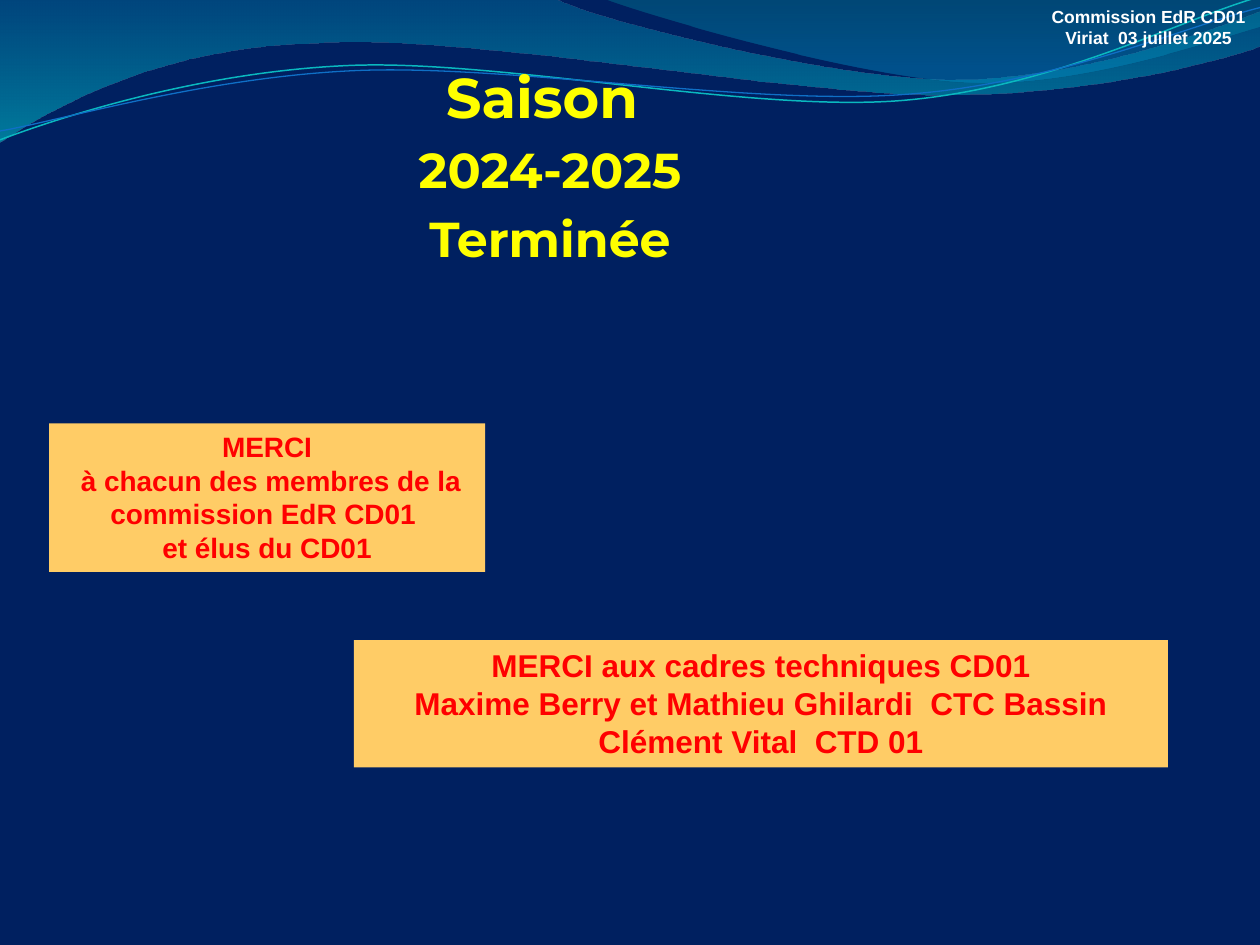
from collections import namedtuple
from math import cos, radians, sin

from lxml.etree import Element, SubElement
from pptx import Presentation
from pptx.dml.color import RGBColor
from pptx.enum.shapes import MSO_SHAPE
from pptx.enum.text import MSO_ANCHOR, MSO_AUTO_SIZE, PP_ALIGN
from pptx.oxml.ns import qn
from pptx.util import Inches, Pt

WIDTH, HEIGHT = Inches(10), Inches(7.5)
COLUMN, ROW = WIDTH / 10, HEIGHT / 7.5
STRAND_TILT = -2.7

NAVY = RGBColor(0x00, 0x20, 0x60)
YELLOW = RGBColor(0xFF, 0xFF, 0x00)
RED = RGBColor(0xFF, 0x00, 0x00)
WHITE = RGBColor(0xFF, 0xFF, 0xFF)
SAND = RGBColor(0xFF, 0xCC, 0x66)
OCEAN = RGBColor(0x00, 0x74, 0xA1)
CYAN = RGBColor(0x00, 0xC6, 0xCF)
TEAL = RGBColor(0x00, 0xA1, 0xA9)
AZURE = RGBColor(0x00, 0x8B, 0xBF)
TURQUOISE = RGBColor(0x0A, 0xB8, 0xBF)
BLUE = RGBColor(0x0F, 0x6F, 0xC6)

Box = namedtuple("Box", "left top width height")
Stop = namedtuple("Stop", "position color opacity")

BROAD_WAVE = [
    [(0, 0)], [(4.4, -0.01)],
    [(4.76, 0.17), (6.64, 0.63), (7.58, 0.63)],
    [(8.53, 0.63), (9.58, 0.26), (10, 0.09)],
    [(10.01, 0.36)],
    [(9.83, 0.44), (8.7, 0.76), (7.46, 0.75)],
    [(6.22, 0.75), (3.82, 0.28), (2.57, 0.34)],
    [(1.29, 0.36), (0.46, 0.83), (-0.01, 1.13)],
    [(0, 0)],
]
RIGHT_WAVE = [
    [(4.79, -0.01)],
    [(5.09, 0.11), (6.82, 0.62), (7.69, 0.65)],
    [(8.56, 0.69), (9.61, 0.32), (10, 0.21)],
    [(10, 0)], [(4.79, -0.01)],
]
UPPER_STRAND = [
    [(0, 1.11)],
    [(0.48, 0.93), (1.58, 0.57), (2.77, 0.52)],
    [(3.95, 0.47), (5.93, 0.89), (7.13, 0.8)],
    [(8.33, 0.71), (9.38, 0.15), (9.98, -0.02)],
]
LOWER_STRAND = [
    [(0, 1.04)],
    [(0.47, 0.96), (1.64, 0.61), (2.83, 0.56)],
    [(4.03, 0.51), (5.97, 0.84), (7.17, 0.75)],
    [(8.36, 0.67), (9.41, 0.21), (10, 0.06)],
]


def on_slide(box):
    """Turn a box in columns and rows into slide lengths."""
    return [round(n * unit) for n, unit in zip(box, (COLUMN, ROW) * 2)]


def turn(point, box, degrees):
    """Turn a point clockwise about the middle of a box."""
    middle_x, middle_y = box.width / 2, box.height / 2
    x, y = point[0] - middle_x, point[1] - middle_y
    c, s = cos(radians(degrees)), sin(radians(degrees))
    return middle_x + x * c - y * s, middle_y + x * s + y * c


def trace(slide, box, segments, closed, tilt=0):
    """Build an outline from straight and curved segments inside a box."""
    placed = []
    for segment in segments:
        level = [turn(point, box, -tilt) for point in segment]
        placed.append([(round((box.left + x) * COLUMN),
                        round((box.top + y) * ROW)) for x, y in level])
    builder = slide.shapes.build_freeform(*placed[0][0])
    builder.add_line_segments([segment[-1] for segment in placed[1:]],
                              close=closed)
    outline = builder.convert_to_shape()
    for edge, segment in zip(list(outline.element.iter(qn("a:lnTo"))),
                             placed[1:]):
        if len(segment) == 3:
            edge.tag = qn("a:cubicBezTo")
        for order, (x, y) in enumerate(segment[:-1]):
            edge.insert(order, Element(qn("a:pt"), x=str(x - outline.left),
                                       y=str(y - outline.top)))
    outline.rotation = tilt
    outline.shadow.inherit = False
    return outline


def add_wave(slide, box, segments, stops):
    """Add a wave with a translucent vertical gradient."""
    wave = trace(slide, box, segments, True)
    wave.line.fill.background()
    wave.fill.gradient()
    wave.fill.gradient_angle = 270
    for target, stop in zip(wave.fill.gradient_stops, stops):
        target.position = stop.position
        target.color.rgb = stop.color
    for color, stop in zip(wave.element.iter(qn("a:srgbClr")), stops):
        SubElement(color, qn("a:alpha"), val=str(stop.opacity * 1000))


def add_strand(slide, box, segments, color, weight):
    """Add a thin flowing line."""
    strand = trace(slide, box, segments, False, STRAND_TILT)
    strand.fill.background()
    strand.line.color.rgb = color
    strand.line.width = Pt(weight)


def add_waves(slide, box):
    """Place the decorative waves along the top of the slide."""
    add_wave(slide, box, BROAD_WAVE, [Stop(0, OCEAN, 45), Stop(1, CYAN, 55)])
    add_wave(slide, box, RIGHT_WAVE, [Stop(0, TEAL, 30), Stop(0.8, AZURE, 45)])
    add_strand(slide, box, UPPER_STRAND, TURQUOISE, 0.85)
    add_strand(slide, box, LOWER_STRAND, BLUE, 0.75)


def write(frame, lines, sizes, font, color):
    """Write centred bold lines."""
    frame.text = "\n".join(lines)
    frame.word_wrap = True
    frame.vertical_anchor = MSO_ANCHOR.TOP
    for paragraph, size in zip(frame.paragraphs, sizes):
        paragraph.alignment = PP_ALIGN.CENTER
        for run in paragraph.runs:
            run.font.name = font
            run.font.size = Pt(size)
            run.font.bold = True
            run.font.color.rgb = color


def add_title(slide, box):
    """Place the season title, with a fifth of a line before each line."""
    title = slide.shapes.add_textbox(*on_slide(box))
    title.text_frame.margin_left = 0
    title.text_frame.margin_right = Inches(0.07)
    write(title.text_frame, ["Saison ", "2024-2025", "Terminée"],
          (32, 28, 28), "Montserrat", YELLOW)
    for properties in title.element.iter(qn("a:pPr")):
        before = SubElement(properties, qn("a:spcBef"))
        SubElement(before, qn("a:spcPct"), val="20000")


def add_thanks(slide, box, lines, size):
    """Place a panel of thanks."""
    panel = slide.shapes.add_shape(MSO_SHAPE.RECTANGLE, *on_slide(box))
    panel.shadow.inherit = False
    panel.fill.solid()
    panel.fill.fore_color.rgb = SAND
    panel.line.fill.background()
    write(panel.text_frame, lines, [size] * len(lines), "Arial", RED)
    panel.text_frame.auto_size = MSO_AUTO_SIZE.SHAPE_TO_FIT_TEXT


def add_meeting(slide, box):
    """Place the meeting name and date."""
    frame = slide.shapes.add_textbox(*on_slide(box)).text_frame
    write(frame, ["Commission EdR CD01", "Viriat  03 juillet 2025"], (10, 10),
          "Arial", WHITE)
    frame.auto_size = MSO_AUTO_SIZE.SHAPE_TO_FIT_TEXT


def main():
    """Build and save the closing slide of the season."""
    deck = Presentation()
    deck.slide_width, deck.slide_height = WIDTH, HEIGHT
    slide = deck.slides.add_slide(deck.slide_layouts[6])
    slide.background.fill.solid()
    slide.background.fill.fore_color.rgb = NAVY
    add_waves(slide, Box(0, 0, 9.98, 1.15))
    add_title(slide, Box(1.36, 0.45, 6.08, 1.61))
    add_thanks(slide, Box(0.39, 3.36, 3.46, 1.18), [
        "MERCI",
        " à chacun des membres de la commission EdR CD01 ",
        "et élus du CD01"], 16)
    add_thanks(slide, Box(2.81, 5.08, 6.46, 1.01), [
        "MERCI aux cadres techniques CD01",
        "Maxime Berry et Mathieu Ghilardi  CTC Bassin",
        "Clément Vital  CTD 01"], 18)
    add_meeting(slide, Box(8.23, 0, 1.77, 0.44))
    deck.save("out.pptx")


if __name__ == "__main__":
    main()
